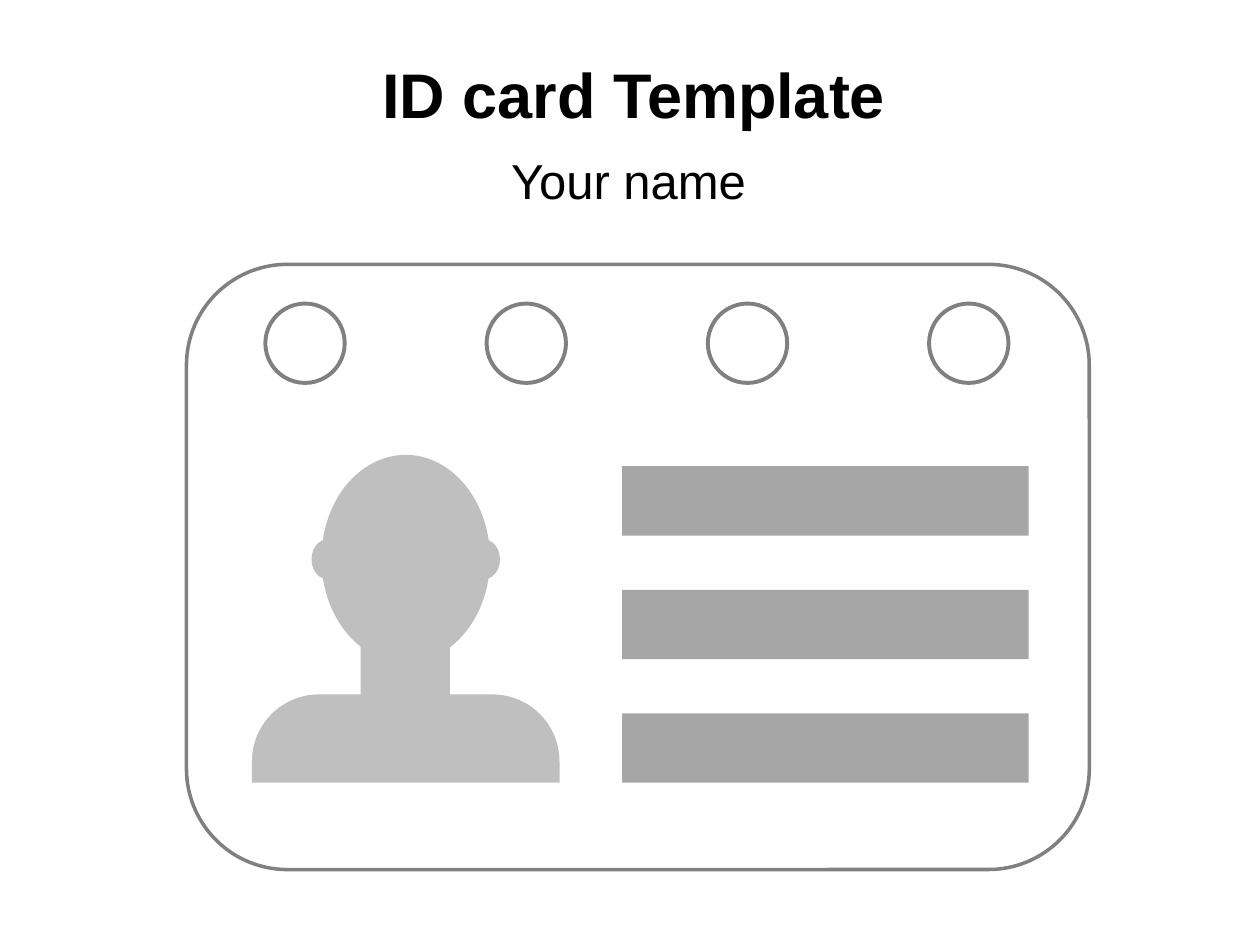
from math import cos, pi, sin

from pptx import Presentation
from pptx.dml.color import RGBColor
from pptx.enum.shapes import MSO_SHAPE as Shape
from pptx.enum.text import MSO_ANCHOR as Anchor, PP_ALIGN as Align
from pptx.util import Cm, Pt

COLORS = {"text": "000000", "outline": "808080",
          "person": "BFBFBF", "field": "A6A6A6"}


def color(name):
    return RGBColor.from_string(COLORS[name])


def write_text(frame, text, size, bold=False, anchor=Anchor.TOP):
    frame.word_wrap = True
    frame.vertical_anchor = anchor
    paragraph = frame.paragraphs[0]
    paragraph.alignment = Align.CENTER
    run = paragraph.add_run()
    run.text = text
    run.font.name = "Arial"
    run.font.size = Pt(size)
    run.font.bold = bold
    run.font.color.rgb = color("text")


def paint(shape, fill=None, line=None, line_width=2):
    shape.shadow.inherit = False
    if fill:
        shape.fill.solid()
        shape.fill.fore_color.rgb = color(fill)
    else:
        shape.fill.background()
    if line:
        shape.line.color.rgb = color(line)
        shape.line.width = Pt(line_width)
    else:
        shape.line.fill.background()


def add_figure(card, kind, left, top, width, height, **style):
    figure = card.shapes.add_shape(
        kind, Cm(left), Cm(top), Cm(width), Cm(height))
    paint(figure, **style)


def add_shoulders(card, left, top, right, bottom, radius, steps=24):
    """Draw a torso with two rounded upper corners."""
    angles = [pi / 2 * step / steps for step in range(steps + 1)]
    left_arc = [(left + radius * (1 - cos(a)), top + radius * (1 - sin(a)))
                for a in angles]
    right_arc = [(left + right - x, y) for x, y in reversed(left_arc)]
    outline = [(Cm(x), Cm(y)) for x, y in
               left_arc + right_arc + [(right, bottom), (left, bottom)]]
    builder = card.shapes.build_freeform(*outline[0])
    builder.add_line_segments(outline[1:], close=True)
    paint(builder.convert_to_shape(), fill="person")


def add_person(card):
    add_figure(card, Shape.OVAL, 6.48, 9.17, 3.4, 4.19, fill="person")
    add_shoulders(card, 5.08, 14, 11.28, 15.78, 1.35)
    add_figure(card, Shape.ROUNDED_RECTANGLE, 7.27, 11.79, 1.8, 3,
               fill="person")
    for ear_left in (6.28, 9.47):
        add_figure(card, Shape.OVAL, ear_left, 10.88, 0.61, 0.79,
                   fill="person")


def main():
    prs = Presentation()
    prs.slide_width, prs.slide_height = Cm(25.4), Cm(19.05)
    slide = prs.slides.add_slide(prs.slide_layouts[5])

    # Heading
    title = slide.shapes.title
    title.left, title.top = Cm(1.98), Cm(0.89)
    title.width, title.height = Cm(21.6), Cm(2)
    write_text(title.text_frame, "ID card Template", size=36, bold=True,
               anchor=Anchor.MIDDLE)
    holder_name = slide.shapes.add_textbox(
        Cm(3.78), Cm(2.9), Cm(17.78), Cm(1.32))
    write_text(holder_name.text_frame, "Your name", size=28)

    # Card with its punched holes
    card = slide.shapes.add_group_shape()
    add_figure(card, Shape.ROUNDED_RECTANGLE, 3.76, 5.33, 18.2, 12.2,
               line="outline")
    for hole in range(4):
        add_figure(card, Shape.OVAL, 5.35 + 4.46 * hole, 6.12, 1.6, 1.6,
                   line="outline", line_width=2.25)

    # Portrait and data fields
    add_person(card)
    for row in range(3):
        add_figure(card, Shape.RECTANGLE, 12.54, 9.4 + 2.49 * row, 8.2, 1.4,
                   fill="field")

    prs.save("out.pptx")


if __name__ == "__main__":
    main()
